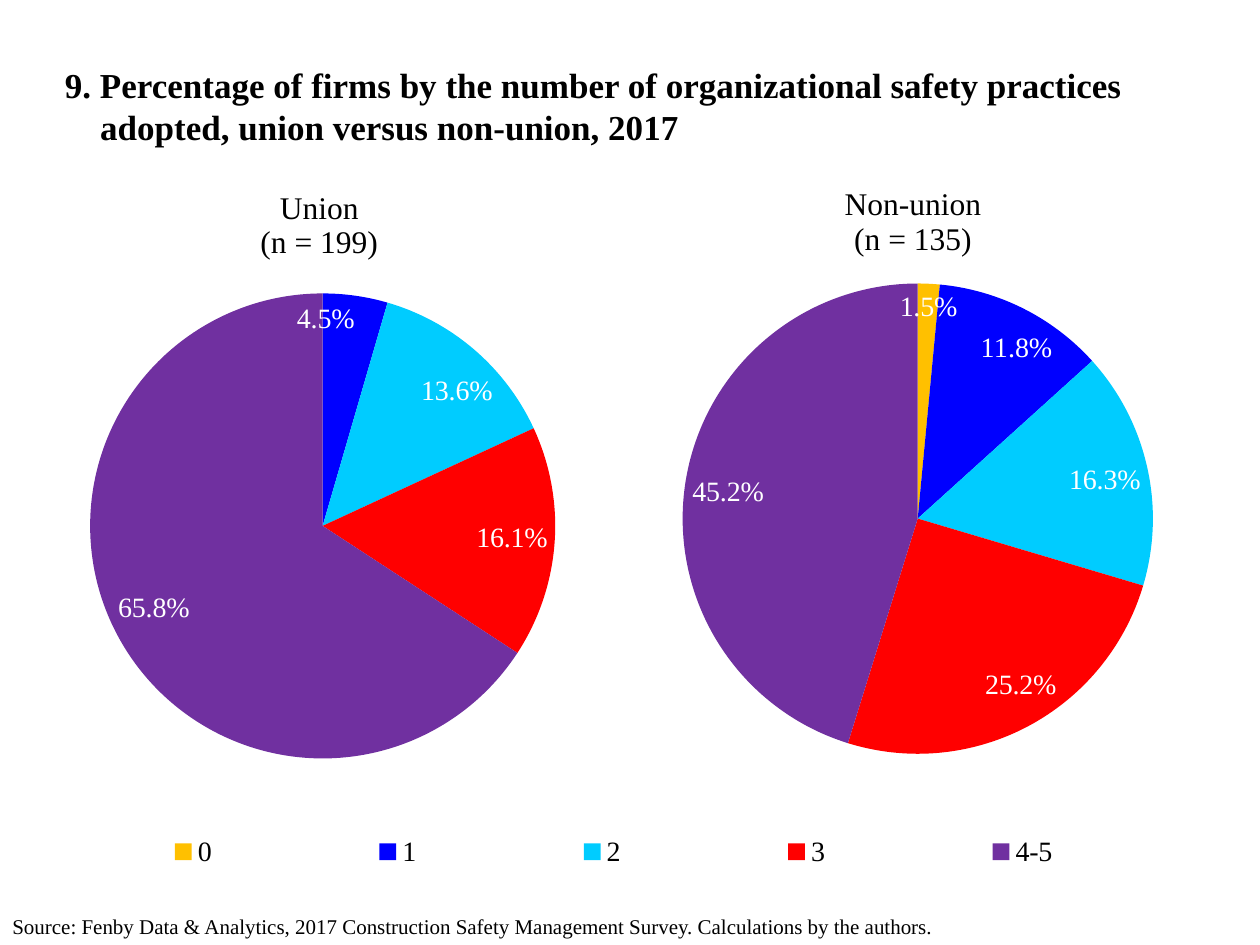
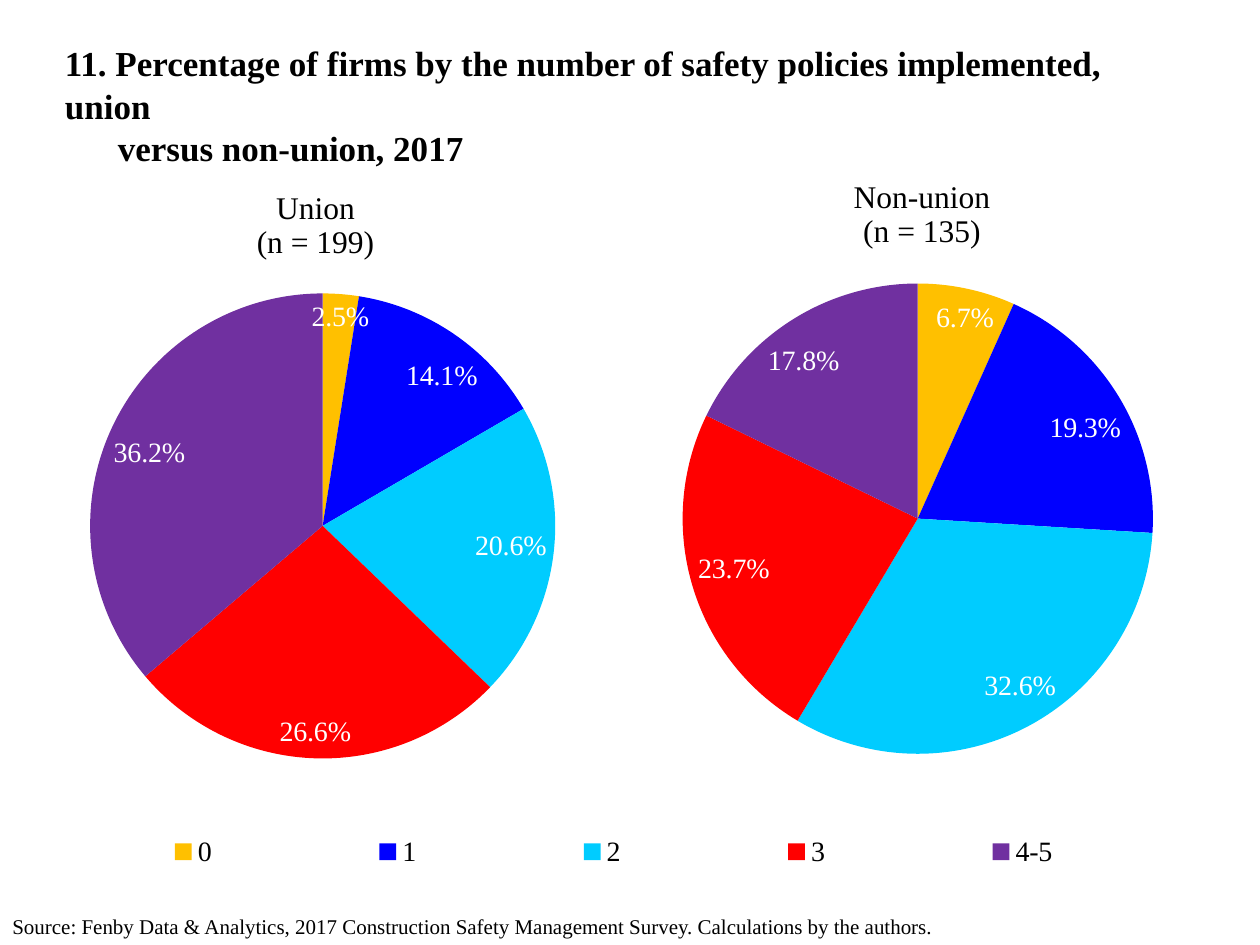
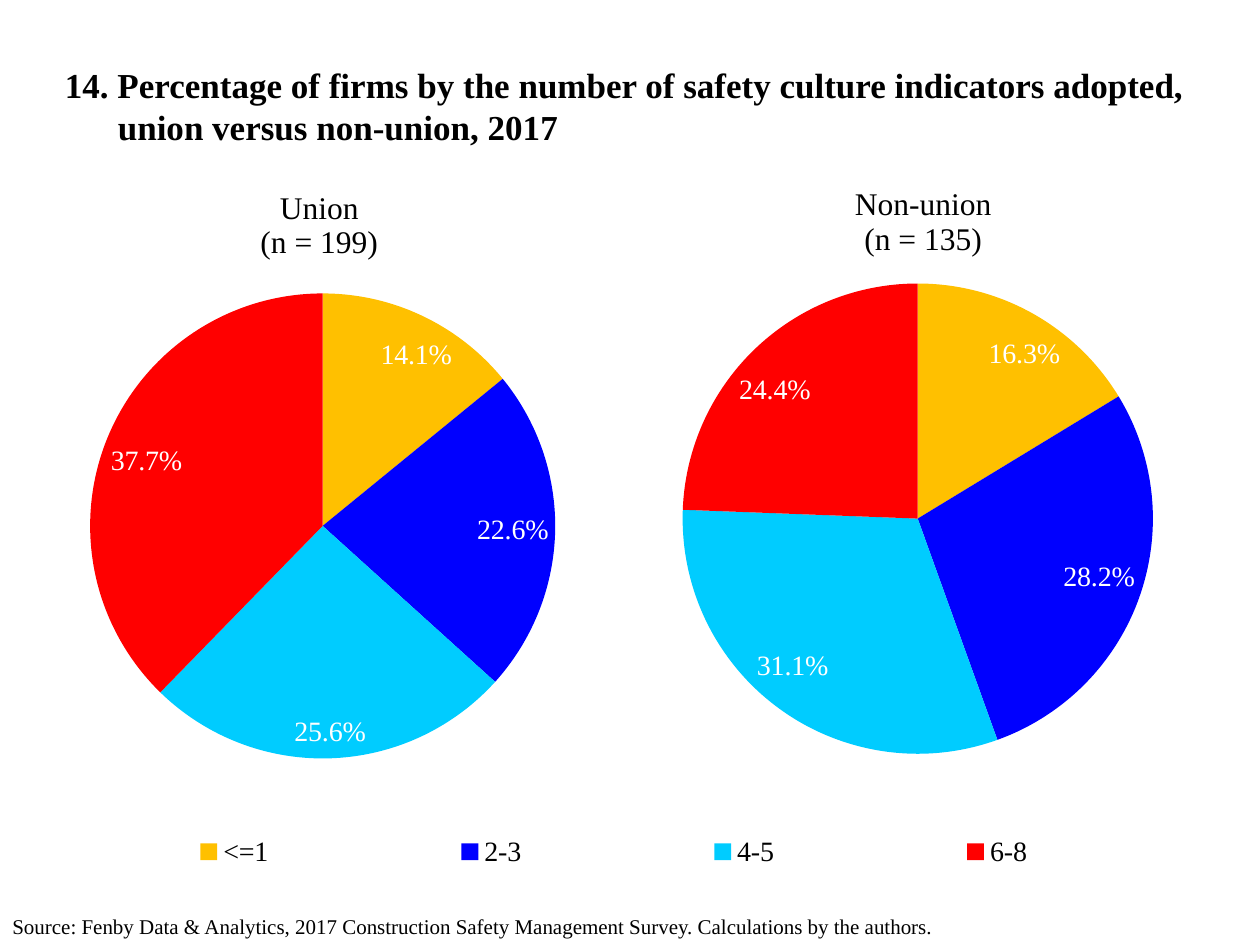
from copy import deepcopy

from pptx import Presentation
from pptx import util as u
from pptx.chart.data import CategoryChartData
from pptx.dml.color import RGBColor
from pptx.enum import chart as charts, text
from pptx.oxml import parse_xml
from pptx.oxml.ns import nsdecls, qn

COLUMNS, ROWS = 120, 90  # grid cells of a twelfth of an inch
FONT = "Times New Roman"
BLACK, WHITE = "000000", "FFFFFF"
GOLD, BLUE, CYAN, RED, PURPLE = "FFC000", "0000FF", "00CCFF", "FF0000", "7030A0"
SLICES = [GOLD, BLUE, CYAN, RED, PURPLE]
THIN_SLICE = 6  # slices below this percentage keep their label at the inner rim

SOURCE = ("Source: Fenby Data & Analytics, 2017 Construction Safety Management "
          "Survey. Calculations by the authors.")

# Grid boxes; the layouts below are percentages of the chart
TITLE_BOX = (5, 5, 110, 10)
SOURCE_BOX = (0, 86.4, 120, 3.6)
UNION = {"box": (0.75, 14, 118.5, 69.75), "plot": (6.6, 20, 37.4, 63.5)}
NON_UNION = {"box": (56, 15, 61, 68.6), "plot": (14.7, 17.5, 73.6, 65.3)}
LEGEND = (0.7, 92.5, 96, 7.5)

PAGES = [
    {"lines": ["9. Percentage of firms by the number of organizational safety practices",
               "adopted, union versus non-union, 2017"],
     "indent": 0.28,
     "categories": ["0", "1", "2", "3", "4-5"],
     "union": [0, 4.5, 13.6, 16.1, 65.8], "union_title": (20, 5.3),
     "non_union": [1.5, 11.8, 16.3, 25.2, 45.2], "non_union_title": (39.5, 3.4)},
    {"lines": ["11. Percentage of firms by the number of safety policies implemented, union",
               "versus non-union, 2017"],
     "indent": 0.42,
     "categories": ["0", "1", "2", "3", "4-5"],
     "union": [2.5, 14.1, 20.6, 26.6, 36.2], "union_title": (19.7, 5.3),
     "non_union": [6.7, 19.3, 32.6, 23.7, 17.8], "non_union_title": (40.9, 2.4)},
    {"lines": ["14. Percentage of firms by the number of safety culture indicators adopted,",
               "union versus non-union, 2017"],
     "indent": 0.42,
     "categories": ["<=1", "2-3", "4-5", "6-8"],
     "union": [14.1, 22.6, 25.6, 37.7], "union_title": (20, 5.3),
     "non_union": [16.3, 28.2, 31.1, 24.4], "non_union_title": (41.1, 3.4)},
]


def color(value):
    return RGBColor.from_string(value)


def apply(target, values):
    for name, value in values.items():
        setattr(target, name, value)


def style_font(font, size, shade=BLACK, bold=False):
    apply(font, {"name": FONT, "size": u.Pt(size), "bold": bold})
    font.color.rgb = color(shade)


def set_layout(parent, index, percents, inner=False):
    """Give a chart part a manual place, in percentages of the chart."""
    for old in parent.findall(qn("c:layout")):
        parent.remove(old)
    target = '<c:layoutTarget val="inner"/>' if inner else ""
    modes = '<c:xMode val="edge"/><c:yMode val="edge"/>'
    sizes = "".join(f'<c:{name} val="{share / 100:.3f}"/>'
                    for name, share in zip("xywh", percents))
    parent.insert(index, parse_xml(
        f'<c:layout {nsdecls("c")}><c:manualLayout>{target}{modes}{sizes}'
        "</c:manualLayout></c:layout>"))


def adjust_labels(labels, values):
    """Drop the label of an empty slice and keep those of thin slices inside."""
    shared = [part for part in labels if part.tag != qn("c:showLeaderLines")]
    special = [(index, value) for index, value in enumerate(values)
               if value < THIN_SLICE]
    for place, (index, value) in enumerate(special):
        label = parse_xml(f'<c:dLbl {nsdecls("c")}><c:idx val="{index}"/></c:dLbl>')
        if value == 0:
            label.append(parse_xml(f'<c:delete {nsdecls("c")} val="1"/>'))
        else:
            label.extend(deepcopy(part) for part in shared)
            label.find(qn("c:dLblPos")).set("val", "inEnd")
        labels.insert(place, label)


class Builder:
    def __init__(self):
        self.deck = Presentation()
        apply(self.deck, {"slide_width": u.Inches(10), "slide_height": u.Inches(7.5)})
        self.page = None

    def add_page(self):
        self.page = self.deck.slides.add_slide(self.deck.slide_layouts[6])

    def cells(self, box):
        units = (self.deck.slide_width / COLUMNS, self.deck.slide_height / ROWS) * 2
        return [round(count * unit) for count, unit in zip(box, units)]

    def add_text(self, box, lines, size, bold=False, **frame_format):
        frame = self.page.shapes.add_textbox(*self.cells(box)).text_frame
        apply(frame, {"word_wrap": True, **frame_format})
        for index, line in enumerate(lines):
            para = frame.paragraphs[0] if index == 0 else frame.add_paragraph()
            span = para.add_run()
            span.text = line
            style_font(span.font, size, bold=bold)
        return frame

    def add_title(self, lines, indent):
        frame = self.add_text(TITLE_BOX, lines, 20, bold=True,
                              vertical_anchor=text.MSO_ANCHOR.MIDDLE,
                              margin_right=u.Inches(0.15))
        # The second line starts under the first word after the number
        frame.paragraphs[1]._p.get_or_add_pPr().set("marL", str(u.Inches(indent)))

    def add_source(self):
        self.add_text(SOURCE_BOX, [SOURCE], 12)

    def add_pie(self, style, heading, heading_place, categories, values, legend=False):
        data = CategoryChartData()
        data.categories = categories
        data.add_series("Series 1", values)
        chart = self.page.shapes.add_chart(
            charts.XL_CHART_TYPE.PIE, *self.cells(style["box"]), data).chart
        style_font(chart.font, 16)

        # Heading
        chart.has_title = True
        frame = chart.chart_title.text_frame
        frame.text = heading
        for para in frame.paragraphs:
            style_font(para.font, 18)
            for span in para.runs:
                style_font(span.font, 18)
        root = chart.element
        set_layout(root.find(".//" + qn("c:title")), 1, heading_place)
        set_layout(root.find(".//" + qn("c:plotArea")), 0, style["plot"], inner=True)

        # Slices and their labels
        plot = chart.plots[0]
        plot.vary_by_categories = True
        series = plot.series[0]
        for index, shade in enumerate(SLICES[:len(values)]):
            fill = series.points[index].format.fill
            fill.solid()
            fill.fore_color.rgb = color(shade)
        labels = series.data_labels
        apply(labels, {"show_percentage": True, "show_value": False,
                       "number_format": "0.0%", "number_format_is_linked": False,
                       "position": charts.XL_LABEL_POSITION.BEST_FIT})
        style_font(labels.font, 16, WHITE)
        adjust_labels(root.find(".//" + qn("c:ser")).find(qn("c:dLbls")), values)

        # Legend
        chart.has_legend = legend
        if legend:
            apply(chart.legend, {"position": charts.XL_LEGEND_POSITION.BOTTOM,
                                 "include_in_layout": False})
            style_font(chart.legend.font, 16)
            set_layout(root.find(".//" + qn("c:legend")), 1, LEGEND)


def main():
    builder = Builder()
    for facts in PAGES:
        builder.add_page()
        builder.add_title(facts["lines"], facts["indent"])
        builder.add_pie(UNION, "Union\n(n = 199)", facts["union_title"],
                        facts["categories"], facts["union"], legend=True)
        numbers = [str(n + 1) for n in range(len(facts["non_union"]))]
        builder.add_pie(NON_UNION, "Non-union\n(n = 135)", facts["non_union_title"],
                        numbers, facts["non_union"])
        builder.add_source()
    builder.deck.save("out.pptx")


if __name__ == "__main__":
    main()
